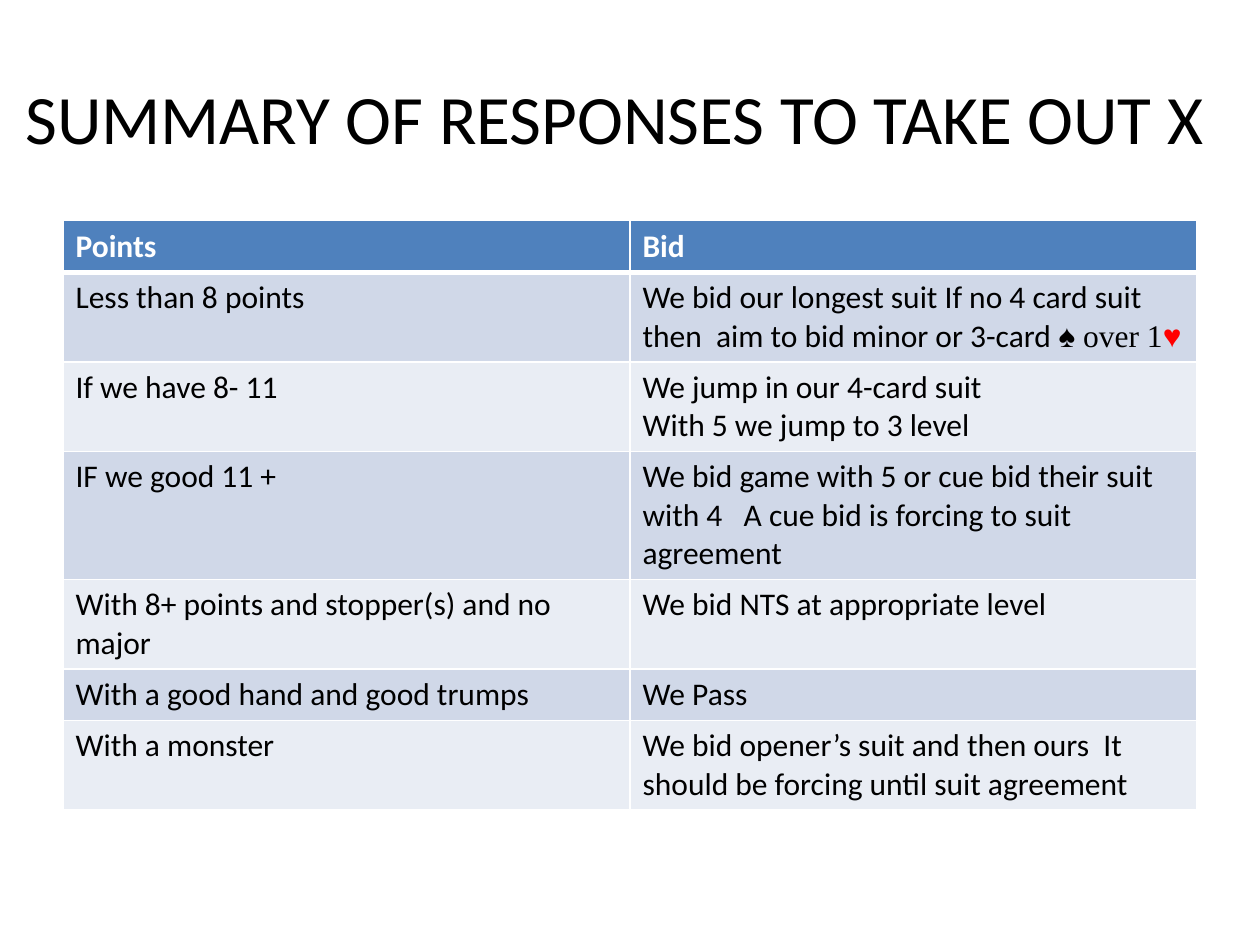
from pptx import Presentation
from pptx.dml.color import RGBColor
from pptx.enum import text
from pptx.oxml import parse_xml
from pptx.oxml.ns import nsdecls
from pptx.util import Cm, Pt

BLACK = RGBColor(0x00, 0x00, 0x00)
WHITE = RGBColor(0xFF, 0xFF, 0xFF)
RED = RGBColor(0xFF, 0x00, 0x00)
HEADER = RGBColor(0x4F, 0x81, 0xBD)
BANDS = (RGBColor(0xD0, 0xD8, 0xE8), RGBColor(0xE9, 0xED, 0xF4))
SERIF = "Times New Roman"

# Each cell is a list of paragraphs, each paragraph a list of (text, format) runs
LONGEST_SUIT = [[
    ("We bid our longest suit If no 4 card suit then  aim to bid minor or 3-card ", {}),
    ("♠ over 1", {"font": SERIF}),
    ("♥", {"font": SERIF, "color": RED}),
]]
JUMP = [[("We jump in our 4-card suit", {})], [("With 5 we jump to 3 level", {})]]

ROWS = [
    ("Points", "Bid"),
    ("Less than 8 points", LONGEST_SUIT),
    ("If we have 8- 11", JUMP),
    ("IF we good 11 +",
     "We bid game with 5 or cue bid their suit with 4   A cue bid is forcing to suit agreement"),
    ("With 8+ points and stopper(s) and no major", "We bid NTS at appropriate level"),
    ("With a good hand and good trumps", "We Pass"),
    ("With a monster",
     "We bid opener’s suit and then ours  It should be forcing until suit agreement"),
]


def add_text(p, content, size=18, font="Calibri", color=BLACK, bold=False):
    r = p.add_run()
    r.text = content
    r.font.size = Pt(size)
    r.font.name = font
    r.font.color.rgb = color
    r.font.bold = bold


def set_borders(cell, top, bottom):
    tcPr = cell._tc.get_or_add_tcPr()
    for side, width in (("L", 1), ("R", 1), ("T", top), ("B", bottom)):
        tcPr.append(parse_xml(
            f'<a:ln{side} {nsdecls("a")} w="{Pt(width)}"><a:solidFill>'
            f'<a:srgbClr val="{WHITE}"/></a:solidFill></a:ln{side}>'))


def fill_cell(cell, content, row):
    is_header = row == 0
    # A thick rule separates the header from the first body row
    set_borders(cell, top=3 if row == 1 else 1, bottom=3 if is_header else 1)
    cell.fill.solid()
    cell.fill.fore_color.rgb = HEADER if is_header else BANDS[(row - 1) % 2]
    base = {"color": WHITE, "bold": True} if is_header else {}
    paragraphs = [[(content, base)]] if isinstance(content, str) else content
    tf = cell.text_frame
    for i, runs in enumerate(paragraphs):
        p = tf.add_paragraph() if i else tf.paragraphs[0]
        for words, style in runs:
            add_text(p, words, **style)


def add_title(s, content):
    sp = s.shapes.title
    sp.left, sp.top, sp.width, sp.height = Cm(0), Cm(0.76), Cm(25.1), Cm(3.18)
    tf = sp.text_frame
    tf.word_wrap = True
    tf.auto_size = text.MSO_AUTO_SIZE.NONE
    tf.vertical_anchor = text.MSO_ANCHOR.MIDDLE
    p = tf.paragraphs[0]
    p.alignment = text.PP_ALIGN.CENTER
    add_text(p, content, size=39.6)


def add_bid_table(s, rows):
    row_height = Cm(1.04)
    table = s.shapes.add_table(len(rows), 2, Cm(1.27), Cm(4.45),
                               Cm(22.86), row_height * len(rows)).table
    for i, contents in enumerate(rows):
        table.rows[i].height = row_height
        for j, content in enumerate(contents):
            fill_cell(table.cell(i, j), content, i)


def main():
    prs = Presentation()
    prs.slide_width, prs.slide_height = Cm(25.4), Cm(19.05)
    s = prs.slides.add_slide(prs.slide_layouts[5])  # title only
    add_title(s, "SUMMARY OF RESPONSES TO TAKE OUT X ")
    add_bid_table(s, ROWS)
    prs.save("out.pptx")


if __name__ == "__main__":
    main()
